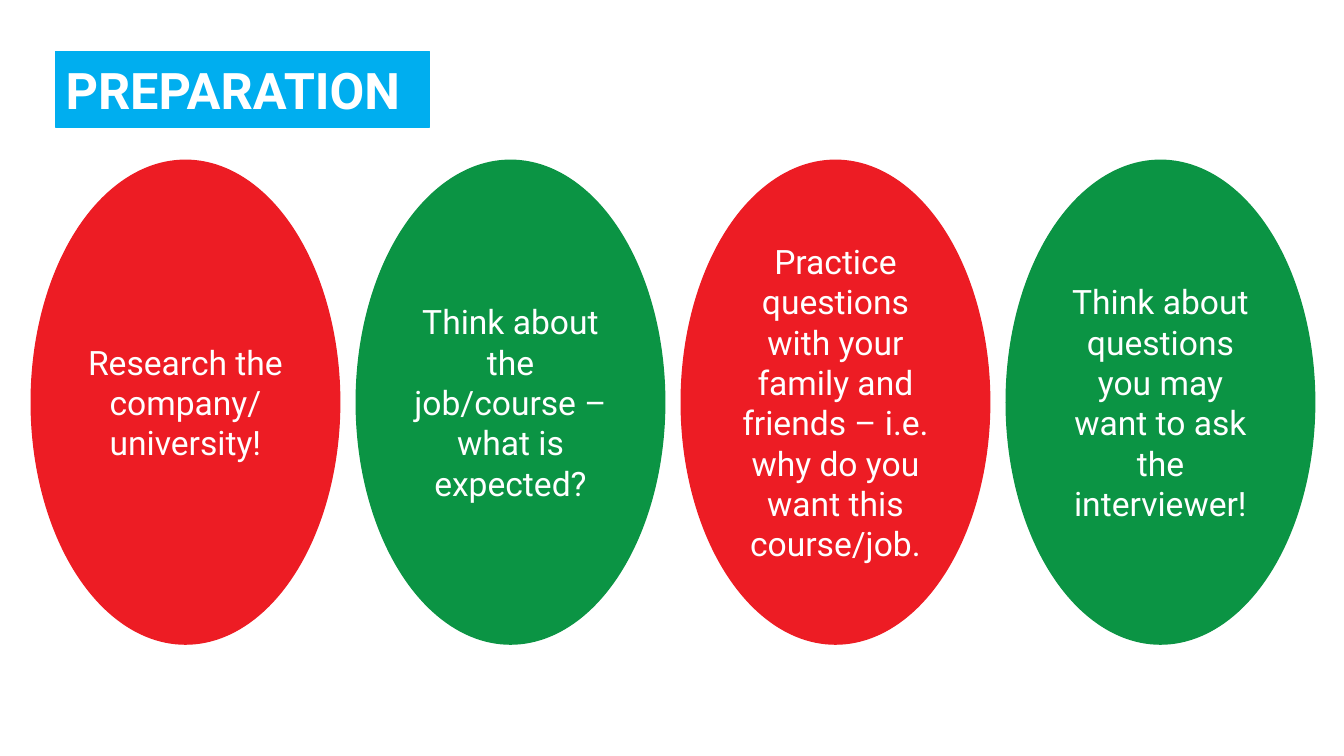
from dataclasses import dataclass

from pptx import Presentation
from pptx.dml.color import RGBColor
from pptx.enum.shapes import MSO_SHAPE
from pptx.enum.text import MSO_ANCHOR, MSO_AUTO_SIZE, PP_ALIGN
from pptx.shapes.autoshape import Shape
from pptx.slide import Slide
from pptx.util import Inches, Pt

COLORS = {"blue": "00AEEF", "red": "ED1C24", "green": "0B9444", "white": "FFFFFF"}

OVAL_LEFT, OVAL_TOP = 0.31, 1.59
OVAL_WIDTH, OVAL_HEIGHT = 3.06, 4.8
LAST_OVAL_LEFT = 9.98


@dataclass
class Step:
    text: str
    color: str


STEPS = [
    Step("Research the company/\nuniversity!", "red"),
    Step("Think about the job/course – what is expected?", "green"),
    Step("Practice questions with your family and friends – i.e. "
         "why do you want this course/job.", "red"),
    Step("Think about questions you may want to ask the interviewer!", "green"),
]


def rgb(name: str) -> RGBColor:
    return RGBColor.from_string(COLORS[name])


def format_box(sp: Shape, text: str, color: str, size: int,
               align: PP_ALIGN, bold: bool = False) -> None:
    """Fill and outline a shape in one colour and set its white text."""
    sp.fill.solid()
    sp.fill.fore_color.rgb = rgb(color)
    sp.line.color.rgb = rgb(color)
    sp.line.width = Pt(1)
    tf = sp.text_frame
    frame_format = {"word_wrap": True, "auto_size": MSO_AUTO_SIZE.NONE,
                    "vertical_anchor": MSO_ANCHOR.MIDDLE}
    for name, value in frame_format.items():
        setattr(tf, name, value)
    p = tf.paragraphs[0]
    p.text = text
    p.alignment = align
    p.line_spacing = 1.0
    p.space_before = Pt(0)
    for r in p.runs:
        for name, value in {"name": "Roboto", "size": Pt(size), "bold": bold}.items():
            setattr(r.font, name, value)
        r.font.color.rgb = rgb("white")


def add_title(s: Slide) -> None:
    sp = s.shapes.title
    box = {"left": 0.55, "top": 0.51, "width": 3.71, "height": 0.75}
    for name, value in box.items():
        setattr(sp, name, Inches(value))
    format_box(sp, "PREPARATION", "blue", 36, PP_ALIGN.LEFT, bold=True)


def add_steps(s: Slide) -> None:
    pitch = (LAST_OVAL_LEFT - OVAL_LEFT) / (len(STEPS) - 1)
    for i, step in enumerate(STEPS):
        sp = s.shapes.add_shape(
            MSO_SHAPE.OVAL, Inches(OVAL_LEFT + i * pitch), Inches(OVAL_TOP),
            Inches(OVAL_WIDTH), Inches(OVAL_HEIGHT))
        sp.shadow.inherit = False
        format_box(sp, step.text, step.color, 24, PP_ALIGN.CENTER)


def main() -> None:
    prs = Presentation()
    prs.slide_width, prs.slide_height = Inches(13.33), Inches(7.5)
    s = prs.slides.add_slide(prs.slide_layouts[5])
    add_title(s)
    add_steps(s)
    prs.save("out.pptx")


if __name__ == "__main__":
    main()
